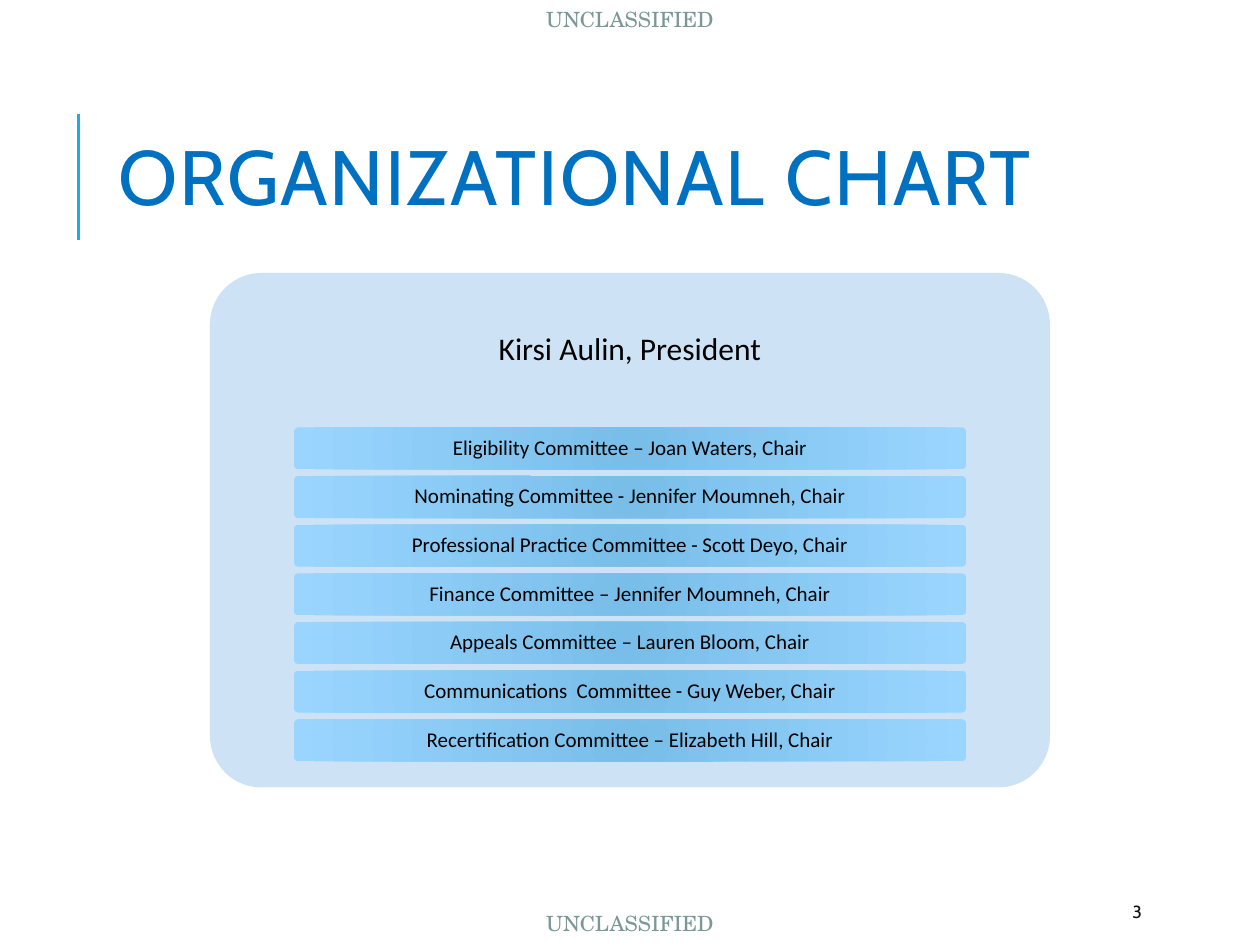
from dataclasses import dataclass

from lxml.etree import SubElement
from pptx import Presentation
from pptx.dml.color import RGBColor
from pptx.enum.shapes import MSO_CONNECTOR, MSO_SHAPE
from pptx.enum.text import MSO_ANCHOR, PP_ALIGN
from pptx.oxml.ns import qn
from pptx.util import Pt

MARKING = "UNCLASSIFIED"
TITLE = "ORGANIZATIONAL CHART"
PRESIDENT = "Kirsi Aulin, President"
COMMITTEES = [
    "Eligibility Committee – Joan Waters, Chair",
    "Nominating Committee - Jennifer Moumneh, Chair",
    "Professional Practice Committee - Scott Deyo, Chair",
    "Finance Committee – Jennifer Moumneh, Chair",
    "Appeals Committee – Lauren Bloom, Chair",
    "Communications  Committee - Guy Weber, Chair",
    "Recertification Committee – Elizabeth Hill, Chair",
]
PAGE = "3"

SLIDE_W, SLIDE_H = 720, 540
PANEL = (120, 156, 480, 294)
BAR_H, BAR_PITCH = 24, 27.8


@dataclass(frozen=True)
class Theme:
    marking: tuple = ("TeX Gyre Schola", 12, "7B9899")
    title: tuple = ("Cabin", 44, "0070C0")
    president: tuple = ("Calibri", 18, "000000")
    committee: tuple = ("Calibri", 12, "000000")
    page: tuple = ("Cabin", 10, "0D0D0D")
    rule: str = "1CADE4"
    panel: str = "CDE3F5"
    bar: tuple = ("78BEE9", "9AD5FF")


THEME = Theme()


def rgb(value):
    return RGBColor.from_string(value)


def write(sp, text, style, align=PP_ALIGN.CENTER, anchor=MSO_ANCHOR.MIDDLE, spacing=None, inset=None):
    tf = sp.text_frame
    tf.word_wrap = True
    tf.vertical_anchor = anchor
    if inset is not None:
        tf.margin_left = tf.margin_right = tf.margin_top = tf.margin_bottom = Pt(inset)
    p = tf.paragraphs[0]
    p.alignment = align
    p.line_spacing = spacing
    name, size, color = style
    p.font.name, p.font.size, p.font.color.rgb = name, Pt(size), rgb(color)
    r = p.add_run()
    r.text = text
    return r


def add_text(s, box, *args, **kwargs):
    return write(s.shapes.add_textbox(*map(Pt, box)), *args, **kwargs)


def add_round(s, box):
    sp = s.shapes.add_shape(MSO_SHAPE.ROUNDED_RECTANGLE, *map(Pt, box))
    sp.adjustments[0] = 0.1
    sp.shadow.inherit = False
    sp.line.fill.background()
    return sp


def fill_radial(sp, colors):
    sp.fill.gradient()
    for stop, color in zip(sp.fill.gradient_stops, colors):
        stop.color.rgb = rgb(color)
    grad = sp._element.spPr.find(qn("a:gradFill"))
    grad.remove(grad.find(qn("a:lin")))
    circle = SubElement(grad, qn("a:path"), {"path": "circle"})
    SubElement(circle, qn("a:fillToRect"), dict.fromkeys("ltrb", "100000"))


def add_rule(s, x, top, bottom):
    line = s.shapes.add_connector(MSO_CONNECTOR.STRAIGHT, Pt(x), Pt(bottom), Pt(x), Pt(top))
    line.line.color.rgb = rgb(THEME.rule)
    line.line.width = Pt(1.5)
    SubElement(line._element.spPr, qn("a:effectLst"))


def add_chart_panel(s):
    left, top, width, height = PANEL
    add_panel = add_round(s, PANEL)
    add_panel.fill.solid()
    add_panel.fill.fore_color.rgb = rgb(THEME.panel)
    head_h = height * 0.3
    add_text(s, (left, top, width, head_h), PRESIDENT, THEME.president, spacing=0.9, inset=5)
    for i, committee in enumerate(COMMITTEES):
        box = (left + width * 0.1, top + head_h + i * BAR_PITCH, width * 0.8, BAR_H)
        bar = add_round(s, box)
        fill_radial(bar, THEME.bar)
        write(bar, committee, THEME.committee, spacing=0.9, inset=2.5)


def main():
    """Build the organizational chart slide."""
    prs = Presentation()
    prs.slide_width, prs.slide_height = Pt(SLIDE_W), Pt(SLIDE_H)
    s = prs.slides.add_slide(prs.slide_layouts[6])
    add_rule(s, 44.75, 65, 137)
    for top in (0, 517):
        add_text(s, (0, top, SLIDE_W, 21.6), MARKING, THEME.marking, anchor=MSO_ANCHOR.TOP)
    r = add_text(s, (60.5, 46, 574, 118), TITLE, THEME.title, align=PP_ALIGN.LEFT, spacing=0.8)
    r._r.get_or_add_rPr().set("spc", "100")
    add_chart_panel(s)
    add_text(s, (640, 510, 57.6, 21.6), PAGE, THEME.page, align=PP_ALIGN.LEFT)
    prs.save("out.pptx")


if __name__ == "__main__":
    main()
